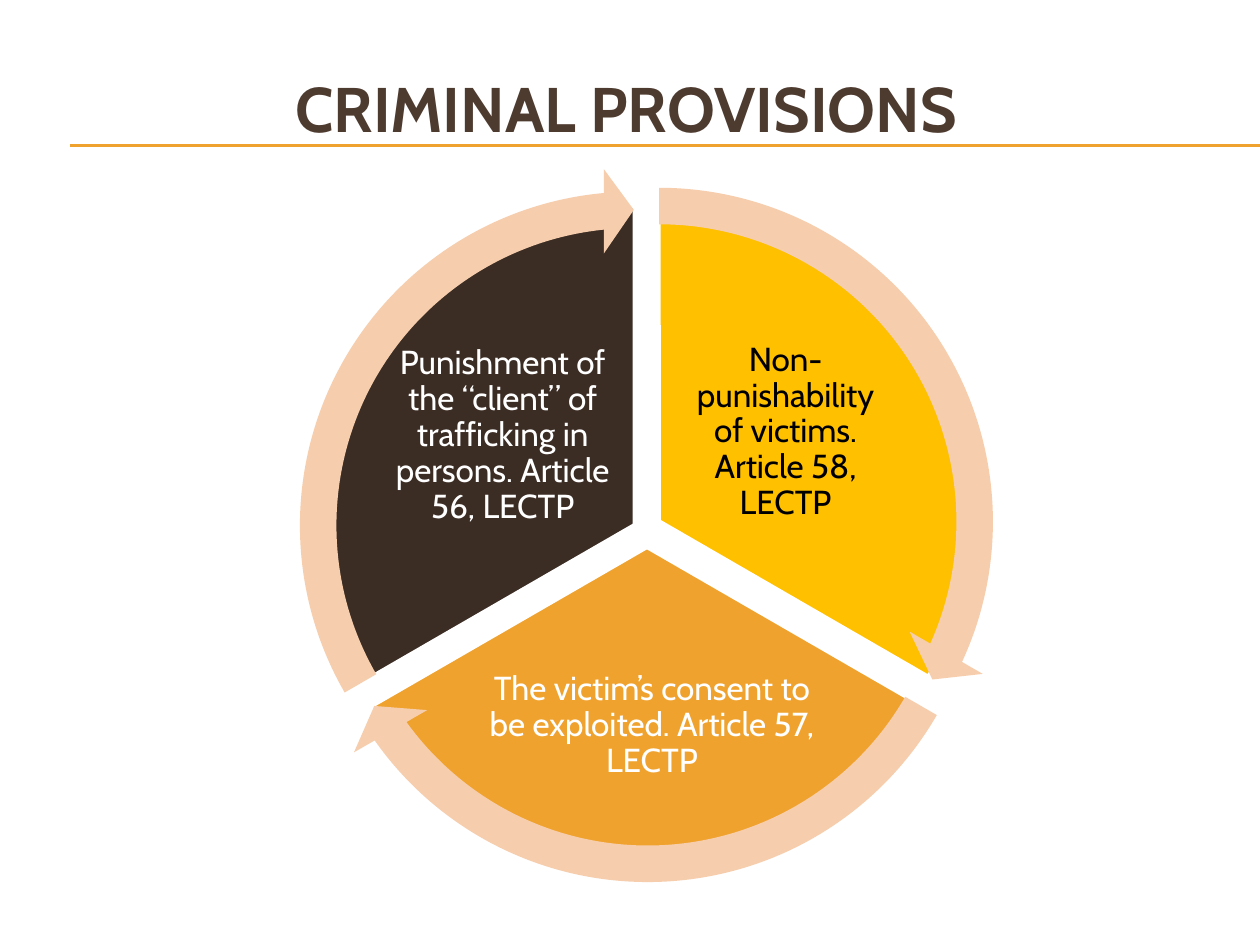
from lxml.etree import SubElement
from pptx import Presentation
from pptx.dml.color import RGBColor
from pptx.enum.shapes import MSO_CONNECTOR, MSO_SHAPE
from pptx.enum.text import MSO_ANCHOR, PP_ALIGN
from pptx.oxml.ns import qn
from pptx.util import Pt

FONT = "Cabin"
BLACK = RGBColor(0x00, 0x00, 0x00)
WHITE = RGBColor(0xFF, 0xFF, 0xFF)
BROWN = RGBColor(0x4E, 0x3B, 0x30)
DARK_BROWN = RGBColor(0x3B, 0x2C, 0x24)
ORANGE = RGBColor(0xF0, 0xA2, 0x2E)
YELLOW = RGBColor(0xFF, 0xC0, 0x00)
PEACH = RGBColor(0xF6, 0xCE, 0xAD)

TITLE = "CRIMINAL PROVISIONS"
RULE_HEIGHTS = (82.8, 83.5)

# Clockwise from the top; boxes are left, top, width, height in points.
PROVISIONS = [
    dict(text="Non-punishability of victims. Article 58, LECTP",
         fill=YELLOW, color=BLACK, pie=(200.2, 115.9, 352.8, 363.6),
         label=(385.9, 193, 126, 108), arrow=(172.1, 93.6)),
    dict(text="The victim’s consent to be exploited. Article 57, LECTP",
         fill=ORANGE, color=WHITE, pie=(187.9, 131, 363.6, 363.6),
         label=(275, 367.2, 195.1, 95), arrow=(165.6, 108.7)),
    dict(text="Punishment of the “client” of trafficking in persons. Article 56, LECTP",
         fill=DARK_BROWN, color=WHITE, pie=(180.7, 118.1, 363.6, 363.6),
         label=(222.5, 195.1, 129.6, 108), arrow=(157.7, 95.8)),
]
ARROW_SIZE = 409

# Angles in the unit of shape adjustments: 0.6 for each degree.
FULL_TURN = 216
TOP = 162
SECTOR = FULL_TURN / len(PROVISIONS)
HEAD_ANGLE = 3.275
BAND_WIDTH = 0.051
HEAD_WIDTH = 0.059


def points(values):
    return [Pt(value) for value in values]


def add_filled(slide, kind, box, color, adjustments):
    shape = slide.shapes.add_shape(kind, *points(box))
    shape.shadow.inherit = False
    shape.fill.solid()
    shape.fill.fore_color.rgb = color
    for index, value in enumerate(adjustments):
        shape.adjustments[index] = value
    return shape


def add_label(slide, provision):
    box = slide.shapes.add_textbox(*points(provision["label"]))
    frame = box.text_frame
    frame.word_wrap = True
    frame.vertical_anchor = MSO_ANCHOR.MIDDLE
    frame.margin_left = frame.margin_right = Pt(2)
    frame.margin_top = frame.margin_bottom = Pt(2)
    para = frame.paragraphs[0]
    para.text = provision["text"]
    para.alignment = PP_ALIGN.CENTER
    para.line_spacing = 0.9
    para.font.name = FONT
    para.font.size = Pt(19)
    para.font.color.rgb = provision["color"]


def add_title(slide):
    title = slide.shapes.title
    title.left, title.top, title.width, title.height = points((33.8, 16.6, 648, 90))
    title.text_frame.vertical_anchor = MSO_ANCHOR.MIDDLE
    para = title.text_frame.paragraphs[0]
    para.text = TITLE
    para.alignment = PP_ALIGN.CENTER
    para.font.name = FONT
    para.font.size = Pt(36)
    para.font.bold = True
    para.font.color.rgb = BROWN


def add_rule(slide, height):
    rule = slide.shapes.add_connector(
        MSO_CONNECTOR.STRAIGHT, *points((40.3, height, 720, height)))
    rule.line.color.rgb = ORANGE
    rule.line.width = Pt(0.75)
    SubElement(rule._element.spPr, qn("a:effectLst"))


def main():
    deck = Presentation()
    deck.slide_width, deck.slide_height = Pt(720), Pt(540)
    slide = deck.slides.add_slide(deck.slide_layouts[5])
    for height in RULE_HEIGHTS:
        add_rule(slide, height)
    add_title(slide)

    sectors = []
    for index, provision in enumerate(PROVISIONS):
        start = (TOP + index * SECTOR) % FULL_TURN
        sectors.append((provision, start, (start + SECTOR) % FULL_TURN))

    for provision, start, end in sectors:
        pie = add_filled(slide, MSO_SHAPE.PIE, provision["pie"],
                         provision["fill"], (start, end))
        pie.line.color.rgb = WHITE
        pie.line.width = Pt(2)
        add_label(slide, provision)

    for provision, start, end in sectors:
        arrow = add_filled(
            slide, MSO_SHAPE.CIRCULAR_ARROW,
            (*provision["arrow"], ARROW_SIZE, ARROW_SIZE), PEACH,
            (BAND_WIDTH, HEAD_ANGLE, end - HEAD_ANGLE, start, HEAD_WIDTH))
        arrow.line.fill.background()

    deck.save("out.pptx")


if __name__ == "__main__":
    main()
